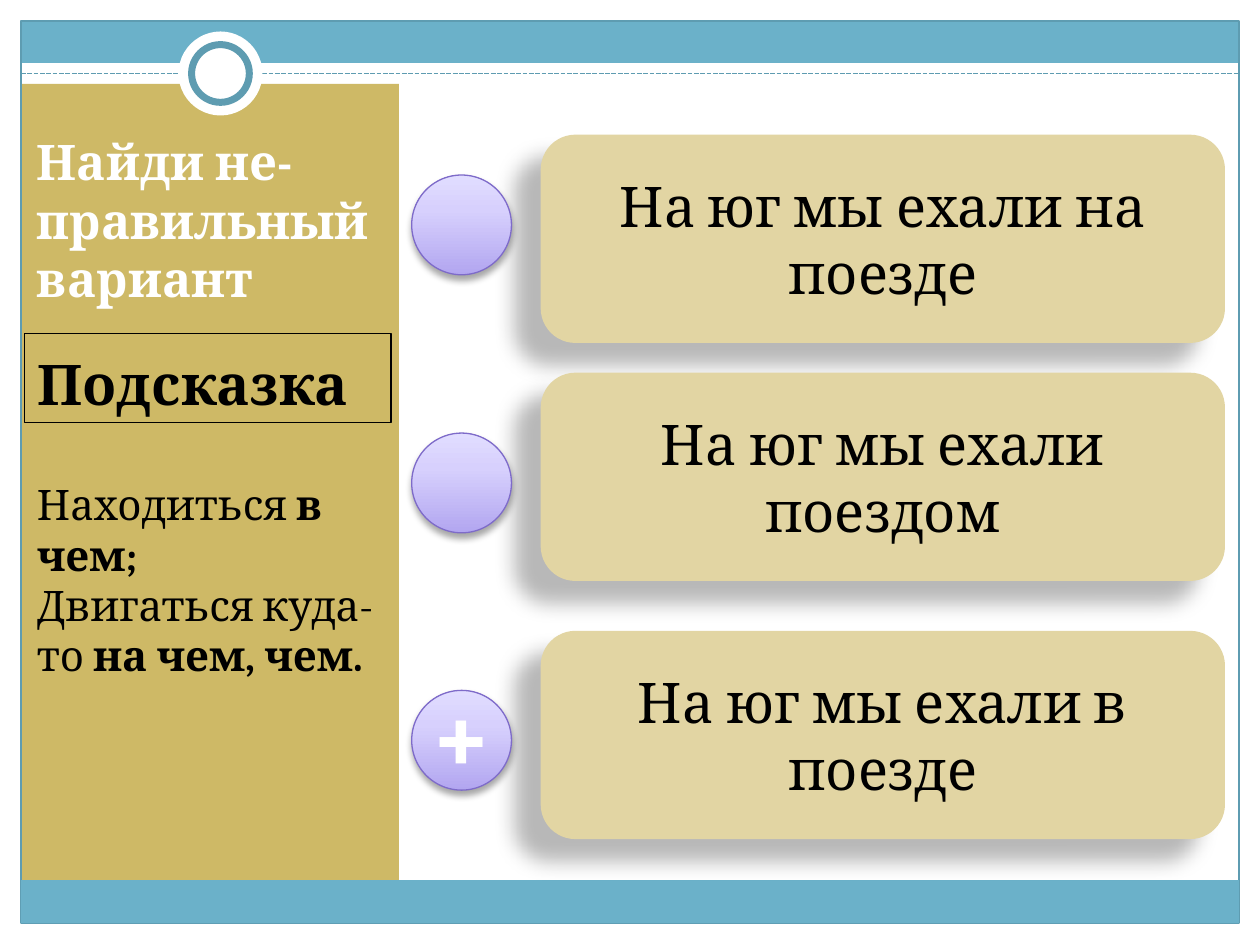
from copy import deepcopy

from lxml.etree import SubElement
from pptx import Presentation
from pptx.dml.color import RGBColor
from pptx.enum.dml import MSO_LINE
from pptx.enum.shapes import MSO_CONNECTOR, MSO_SHAPE
from pptx.enum.text import MSO_ANCHOR, PP_ALIGN
from pptx.oxml.ns import qn
from pptx.util import Pt

FONT = "Cambria"
COLORS = {
    "white": "FFFFFF",
    "black": "000000",
    "blue": "6BB1C9",
    "blue_line": "5E9CB1",
    "gold": "CEB966",
    "sand": "E2D5A3",
    "violet_line": "7E6BC9",
}
BALL_GRADIENT = [(0, "B2A6F0"), (0.65, "D7D0FD"), (1, "E1DDFF")]
ANSWERS = [  # wording, top of the card, top of the ball
    ("На юг мы ехали на поезде", 77, 100),
    ("На юг мы ехали поездом", 213, 247.5),
    ("На юг мы ехали в поезде", 360.5, 394.5),
]


def color(name):
    return RGBColor.from_string(COLORS[name])


def add_box(page, kind, left, top, width, height, fill=None, line=None, weight=0.75):
    box = page.shapes.add_shape(kind, Pt(left), Pt(top), Pt(width), Pt(height))
    box.shadow.inherit = False
    if fill:
        box.fill.solid()
        box.fill.fore_color.rgb = color(fill)
    else:
        box.fill.background()
    if line:
        box.line.color.rgb = color(line)
        box.line.width = Pt(weight)
    else:
        box.line.fill.background()
    return box


def add_shadow(effects, alpha, blur, distance, angle):
    """Put an outer black shadow in an a:effectLst element."""
    shadow = SubElement(effects, qn("a:outerShdw"), blurRad=str(Pt(blur)),
                        dist=str(Pt(distance)), dir=str(angle * 60000),
                        algn="ctr", rotWithShape="0")
    tone = SubElement(shadow, qn("a:srgbClr"), val=COLORS["black"])
    SubElement(tone, qn("a:alpha"), val=str(alpha * 1000))


def shape_effects(shape):
    return shape._element.spPr.find(qn("a:effectLst"))


def format_para(para, size, tone="black", bold=None, align=PP_ALIGN.LEFT):
    para.alignment = align
    para.font.name = FONT
    para.font.size = Pt(size)
    para.font.color.rgb = color(tone)
    para.font.bold = bold


def add_text(page, left, top, width, height):
    box = page.shapes.add_textbox(Pt(left), Pt(top), Pt(width), Pt(height))
    box.text_frame.word_wrap = True
    return box.text_frame


def add_frame(page):
    add_box(page, MSO_SHAPE.RECTANGLE, 12, 12, 696, 24, "blue")
    add_box(page, MSO_SHAPE.RECTANGLE, 12, 48, 216, 462, "gold")
    add_box(page, MSO_SHAPE.RECTANGLE, 12, 12, 696, 515.5, line="blue_line")
    rule = page.shapes.add_connector(MSO_CONNECTOR.STRAIGHT, Pt(12), Pt(42), Pt(708), Pt(42))
    rule.line.color.rgb = color("blue_line")
    rule.line.width = Pt(0.9)
    rule.line.dash_style = MSO_LINE.SQUARE_DOT
    SubElement(rule._element.spPr, qn("a:effectLst"))
    add_box(page, MSO_SHAPE.OVAL, 102, 18, 48, 48, "white")
    add_box(page, MSO_SHAPE.OVAL, 109.5, 25.5, 33, 33, "white", "blue_line", 4)
    add_box(page, MSO_SHAPE.RECTANGLE, 12, 503, 696, 24.5, "blue")


def add_card(page, text, top):
    card = add_box(page, MSO_SHAPE.ROUNDED_RECTANGLE, 309, top, 391, 119, "sand")
    add_shadow(shape_effects(card), 28, 11.8, 19.7, 141)
    card.text_frame.vertical_anchor = MSO_ANCHOR.MIDDLE
    para = card.text_frame.paragraphs[0]
    para.text = text
    format_para(para, 32, align=PP_ALIGN.CENTER)


def add_ball(page, top):
    ball = add_box(page, MSO_SHAPE.OVAL, 235.25, top, 57, 57, line="violet_line")
    ball.fill.gradient()
    ball.fill.gradient_angle = 90
    stops = ball._element.spPr.find(".//" + qn("a:gsLst"))
    stops.append(deepcopy(stops[-1]))
    for stop, (position, tone) in zip(ball.fill.gradient_stops, BALL_GRADIENT):
        stop.position = position
        stop.color.rgb = RGBColor.from_string(tone)
    add_shadow(shape_effects(ball), 35, 4, 3, 90)


def add_plus(page):
    para = add_text(page, 230, 378, 67.5, 80).paragraphs[0]
    para.alignment = PP_ALIGN.CENTER
    span = para.add_run()
    span.text = "+"
    span.font.size = Pt(60)
    span.font.bold = True
    span.font.color.rgb = color("white")
    effects = SubElement(span.font._element, qn("a:effectLst"))
    add_shadow(effects, 40, 4, 3, 90)
    span.font.name = FONT


def place_title(page):
    title = page.shapes.title
    page.shapes._spTree.append(title._element)  # bring in front of the gold panel
    title.left, title.top, title.width, title.height = Pt(14), Pt(190.5), Pt(209.5), Pt(51)
    title.line.color.rgb = color("black")
    title.line.width = Pt(0.75)
    title.text_frame.text = "Подсказка"
    title.text_frame.vertical_anchor = MSO_ANCHOR.BOTTOM
    format_para(title.text_frame.paragraphs[0], 32, bold=True)


def add_task(page):
    para = add_text(page, 14, 71.5, 209.5, 142).paragraphs[0]
    para.text = "Найди не- правильный вариант"
    para.space_before = Pt(5.6)
    para.space_after = Pt(10)
    format_para(para, 28, "white", True)


def add_hint(page):
    frame = add_text(page, 14, 270, 215, 124)
    lines = [("Находиться", " в чем;"), ("Двигаться куда- то", " на чем, чем.")]
    for index, (plain, strong) in enumerate(lines):
        para = frame.add_paragraph() if index else frame.paragraphs[0]
        format_para(para, 24)
        para.add_run().text = plain
        span = para.add_run()
        span.text = strong
        span.font.bold = True


def main():
    deck = Presentation()
    deck.slide_width, deck.slide_height = Pt(720), Pt(540)
    page = deck.slides.add_slide(deck.slide_layouts[5])
    add_frame(page)
    for text, card_top, ball_top in ANSWERS:
        add_card(page, text, card_top)
        add_ball(page, ball_top)
    add_plus(page)
    place_title(page)
    add_task(page)
    add_hint(page)
    deck.save("out.pptx")


if __name__ == "__main__":
    main()
